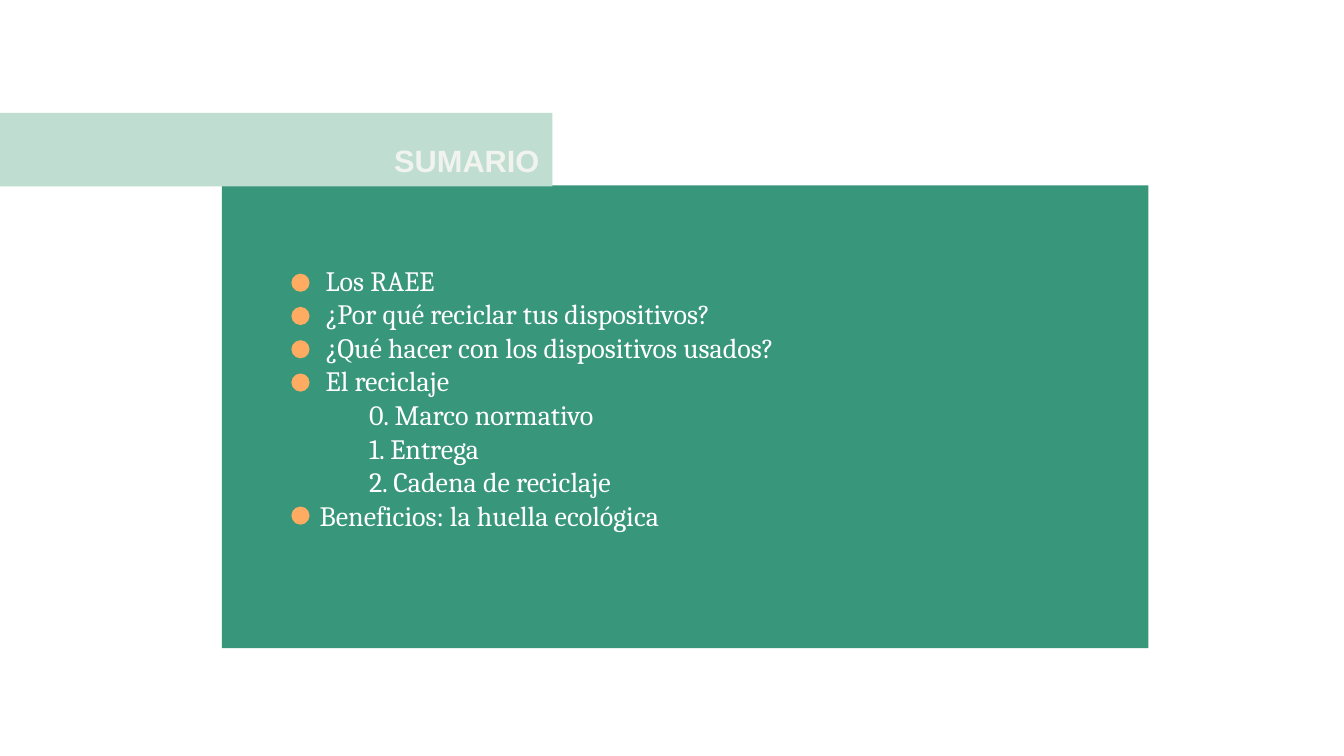
"""Build the agenda slide: a title band above a panel listing the topics."""
from pptx import Presentation, util as u
from pptx.dml.color import RGBColor
from pptx.enum import shapes, text

THEME = {
    "panel": "38967B", "band": "BFDDD1", "dot": "FFAB61",
    "title": "F0F3EE", "body": "FFFFFF",
    "title_font": "Arial", "body_font": "Cambria",
    "title_size": 22, "body_size": 20,
}
WIDTH, HEIGHT = 13.33, 7.5
ROW = 0.33
FIRST_ROW = 2.61
DOT = 0.18
DOT_LEFT = 2.89
TEXT_LEFT = 3.17
TOPICS = [
    ("Los RAEE", 0.06, True),
    ("¿Por qué reciclar tus dispositivos?", 0.06, True),
    ("¿Qué hacer con los dispositivos usados?", 0.06, True),
    ("El reciclaje", 0.06, True),
    ("0. Marco normativo", 0.49, False),
    ("1. Entrega", 0.49, False),
    ("2. Cadena de reciclaje", 0.49, False),
    ("Beneficios: la huella ecológica", 0, True),
]

presentation = Presentation()
presentation.slide_width = u.Inches(WIDTH)
presentation.slide_height = u.Inches(HEIGHT)
slide = presentation.slides.add_slide(presentation.slide_layouts[6])


def add_block(kind, left, top, width, height, color):
    shape = slide.shapes.add_shape(kind, *map(u.Inches, (left, top, width, height)))
    shape.shadow.inherit = False
    shape.fill.solid()
    shape.fill.fore_color.rgb = RGBColor.from_string(THEME[color])
    shape.line.fill.background()
    return shape


def write(paragraph, words, *, role, bold=False, indent=0, align=text.PP_ALIGN.LEFT):
    paragraph.alignment = align
    if indent:
        paragraph._p.get_or_add_pPr().set("marL", str(u.Inches(indent)))
    run = paragraph.add_run()
    run.text = words
    run.font.name = THEME[role + "_font"]
    run.font.size = u.Pt(THEME[role + "_size"])
    run.font.bold = bold
    run.font.color.rgb = RGBColor.from_string(THEME[role])


add_block(shapes.MSO_SHAPE.RECTANGLE, 2.2, 1.84, 9.19, 4.59, "panel")
band = add_block(shapes.MSO_SHAPE.RECTANGLE, 0, 1.12, 5.48, 0.73, "band")
band.text_frame.vertical_anchor = text.MSO_ANCHOR.BOTTOM
band.text_frame.margin_right = u.Inches(0.13)
band.text_frame.margin_bottom = u.Inches(0.08)
write(band.text_frame.paragraphs[0], "SUMARIO", role="title", bold=True,
      align=text.PP_ALIGN.RIGHT)

topic_box = slide.shapes.add_textbox(
    u.Inches(TEXT_LEFT), u.Inches(FIRST_ROW), u.Inches(8), u.Inches(ROW * len(TOPICS)))
frame = topic_box.text_frame
frame.word_wrap = True
frame.margin_left = frame.margin_right = frame.margin_top = frame.margin_bottom = 0

for row, (topic, indent, dotted) in enumerate(TOPICS):
    paragraph = frame.add_paragraph() if row else frame.paragraphs[0]
    write(paragraph, topic, role="body", indent=indent)
    if dotted:
        dot_top = FIRST_ROW + row * ROW + (ROW - DOT) / 2 + 0.03
        add_block(shapes.MSO_SHAPE.OVAL, DOT_LEFT, dot_top, DOT, DOT, "dot")

presentation.save("out.pptx")
